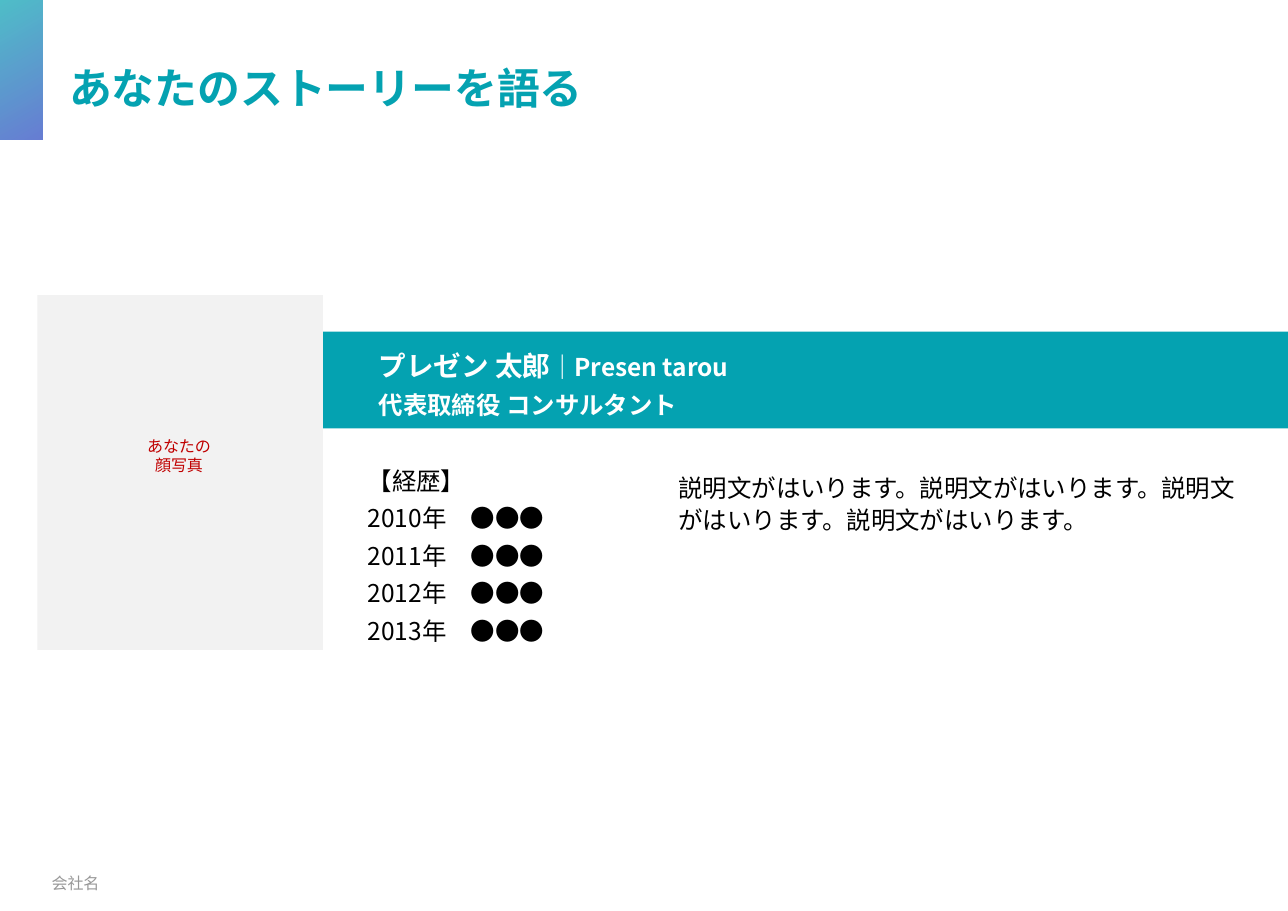
from pptx import Presentation
from pptx.dml.color import RGBColor
from pptx.enum.shapes import MSO_SHAPE
from pptx.enum.text import MSO_ANCHOR, MSO_AUTO_SIZE, PP_ALIGN
from pptx.oxml.ns import qn
from pptx.util import Pt

PX = 9144  # 100 px to the inch
RECTANGLE = MSO_SHAPE.RECTANGLE
TOP, MIDDLE = MSO_ANCHOR.TOP, MSO_ANCHOR.MIDDLE
FIXED, GROW = MSO_AUTO_SIZE.NONE, MSO_AUTO_SIZE.SHAPE_TO_FIT_TEXT
LEFT, CENTER = PP_ALIGN.LEFT, PP_ALIGN.CENTER

TEAL = RGBColor(0x04, 0xA2, 0xB1)
BLUE = RGBColor(0x27, 0x46, 0xC0)
LIGHT_GRAY = RGBColor(0xF2, 0xF2, 0xF2)
GRAY = RGBColor(0x98, 0x98, 0x98)
RED = RGBColor(0xC0, 0x00, 0x00)
WHITE = RGBColor(0xFF, 0xFF, 0xFF)
BLACK = RGBColor(0x00, 0x00, 0x00)
JAPANESE, LATIN = "Noto Sans CJK JP", "Calibri"

# Content: a text is a list of paragraphs, a paragraph a list of (words, size)
SLIDE_SIZE = (1169, 827)
ACCENT_AREA = (0, 0, 39, 127)
PANELS = [((293, 301, 876, 88), TEAL), ((34, 268, 259, 322), LIGHT_GRAY)]
YEARS = range(2010, 2014)
CAREER = ["【経歴】"] + [f"{year}年\u3000●●●" for year in YEARS]
DESCRIPTION = "説明文がはいります。" * 4

PLAIN = {"margins": (10, 5, 10, 5), "anchor": MIDDLE, "after": 0}
BODY = {"margins": (10, 7, 10, 5), "anchor": TOP, "after": 5.3}
TEXTS = [
    ((53, 47, 1116, 60), [[("あなたのストーリーを語る", 28)]],
     PLAIN | {"color": TEAL, "bold": True, "spacing": 1.1, "fit": GROW}),
    ((37, 780, 345, 44), [[("会社名", 10.5)]],
     PLAIN | {"color": GRAY, "font": LATIN}),
    ((334, 310, 436, 63),
     [[("プレゼン 太郎", 18), ("｜Presen tarou", 16)],
      [("代表取締役 コンサルタント", 16)]],
     BODY | {"color": WHITE, "bold": True}),
    ((110, 389, 105, 38), [[("あなたの\v顔写真", 10.5)]],
     BODY | {"color": RED, "align": CENTER}),
    ((324, 416, 246, 175), [[(line, 16)] for line in CAREER],
     BODY | {"color": BLACK, "fit": GROW}),
    ((606, 420, 529, 70), [[(DESCRIPTION, 16)]],
     BODY | {"color": BLACK, "spacing": 1.1, "after": 0, "fit": GROW}),
]


def scaled(lengths):
    return [length * PX for length in lengths]


def add_panel(page, area):
    panel = page.shapes.add_shape(RECTANGLE, *scaled(area))
    panel.shadow.inherit = False
    panel.line.fill.background()
    return panel


def add_accent(page):
    accent = add_panel(page, ACCENT_AREA)
    accent.fill.gradient()
    accent.fill.gradient_angle = 300
    for stop, color in zip(accent.fill.gradient_stops, (TEAL, BLUE)):
        stop.color.rgb = color
    for color in accent.fill._xPr.iter(qn("a:srgbClr")):
        color.makeelement(qn("a:alpha"), {})
        alpha = color.makeelement(qn("a:alpha"), {"val": "70000"})
        color.append(alpha)


def add_span(para, words, size, style):
    name = style.get("font", JAPANESE)
    for index, line in enumerate(words.split("\v")):
        if index:
            para.add_line_break()
        span = para.add_run()
        span.text = line
        span.font.color.rgb = style["color"]
        values = {"name": name, "size": Pt(size), "bold": style.get("bold", False)}
        for key, value in values.items():
            setattr(span.font, key, value)
        # East Asian typeface follows the Latin one
        properties = span.font._element
        properties.append(properties.makeelement(qn("a:ea"), {"typeface": name}))


def add_text(page, area, paragraphs, style):
    frame = page.shapes.add_textbox(*scaled(area)).text_frame
    left, top, right, bottom = scaled(style["margins"])
    values = {"word_wrap": True, "auto_size": style.get("fit", FIXED),
              "vertical_anchor": style["anchor"], "margin_left": left,
              "margin_top": top, "margin_right": right, "margin_bottom": bottom}
    for key, value in values.items():
        setattr(frame, key, value)
    for index, spans in enumerate(paragraphs):
        para = frame.add_paragraph() if index else frame.paragraphs[0]
        para.alignment = style.get("align", LEFT)
        para.line_spacing = style.get("spacing", 1.0)
        para.space_after = Pt(style["after"])
        for words, size in spans:
            add_span(para, words, size, style)


def main():
    deck = Presentation()
    deck.slide_width, deck.slide_height = scaled(SLIDE_SIZE)
    page = deck.slides.add_slide(deck.slide_layouts[6])

    # Accent, name band and photo area
    add_accent(page)
    for area, color in PANELS:
        panel = add_panel(page, area)
        panel.fill.solid()
        panel.fill.fore_color.rgb = color

    # Title, footer, profile and description
    for area, paragraphs, style in TEXTS:
        add_text(page, area, paragraphs, style)
    deck.save("out.pptx")


if __name__ == "__main__":
    main()
